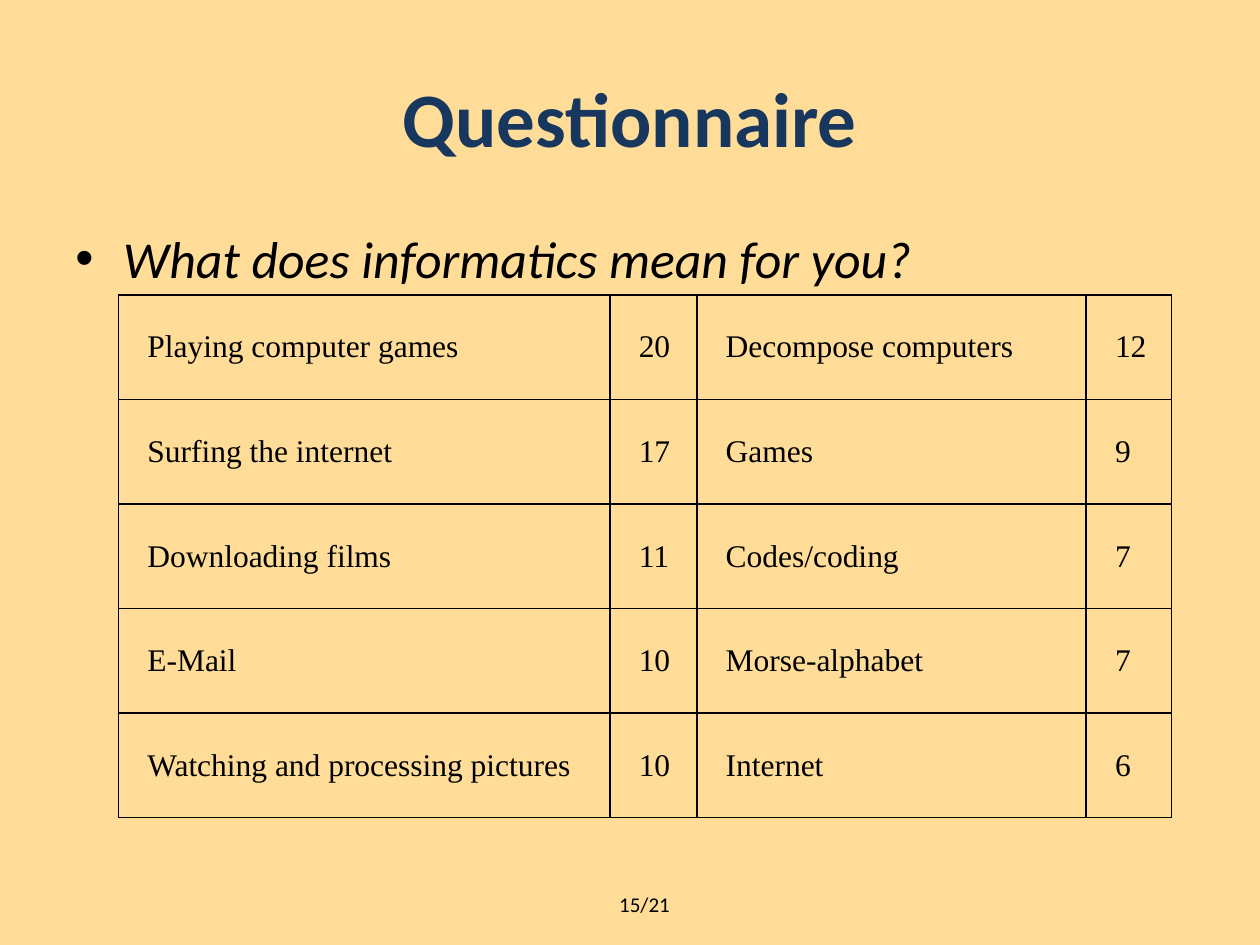
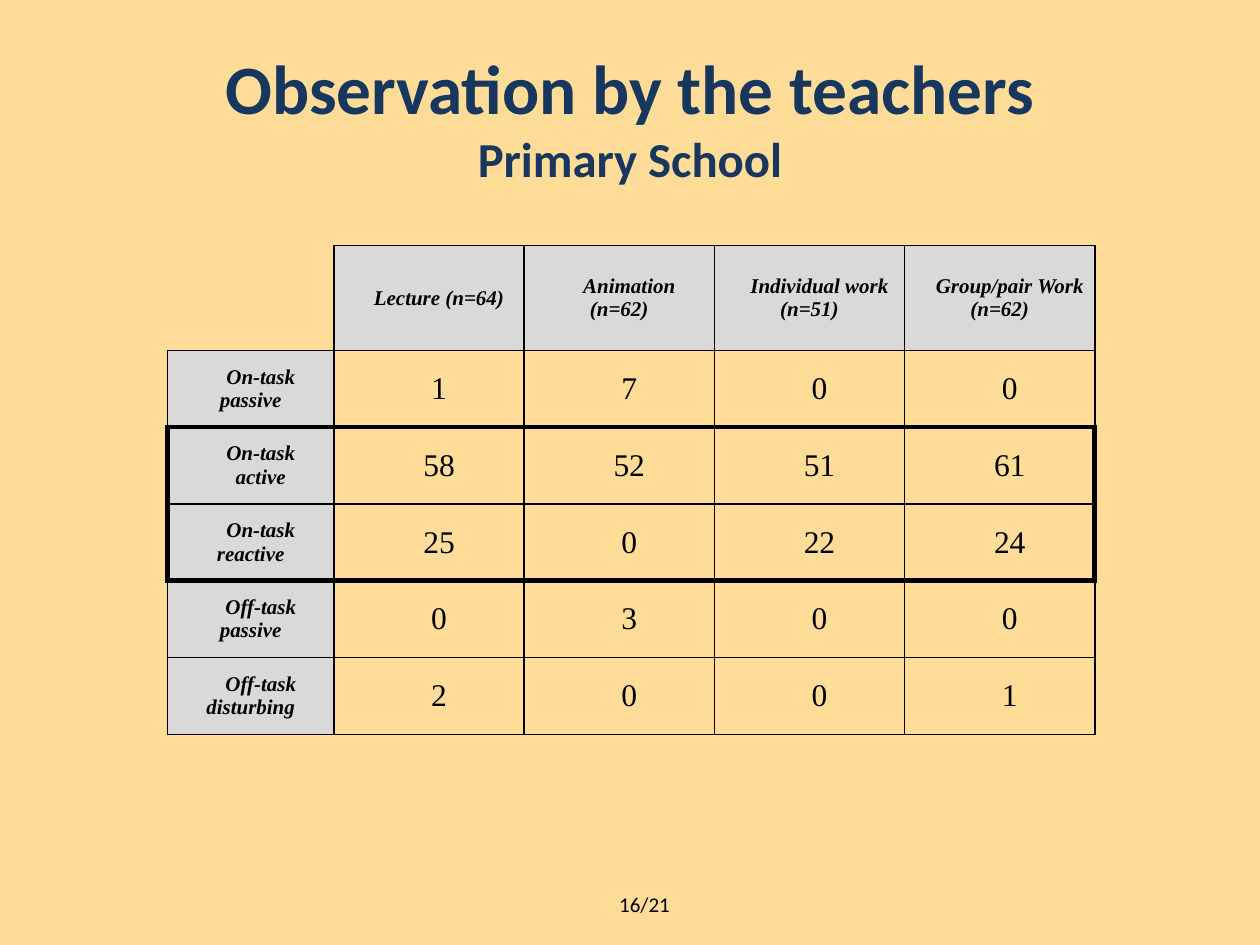
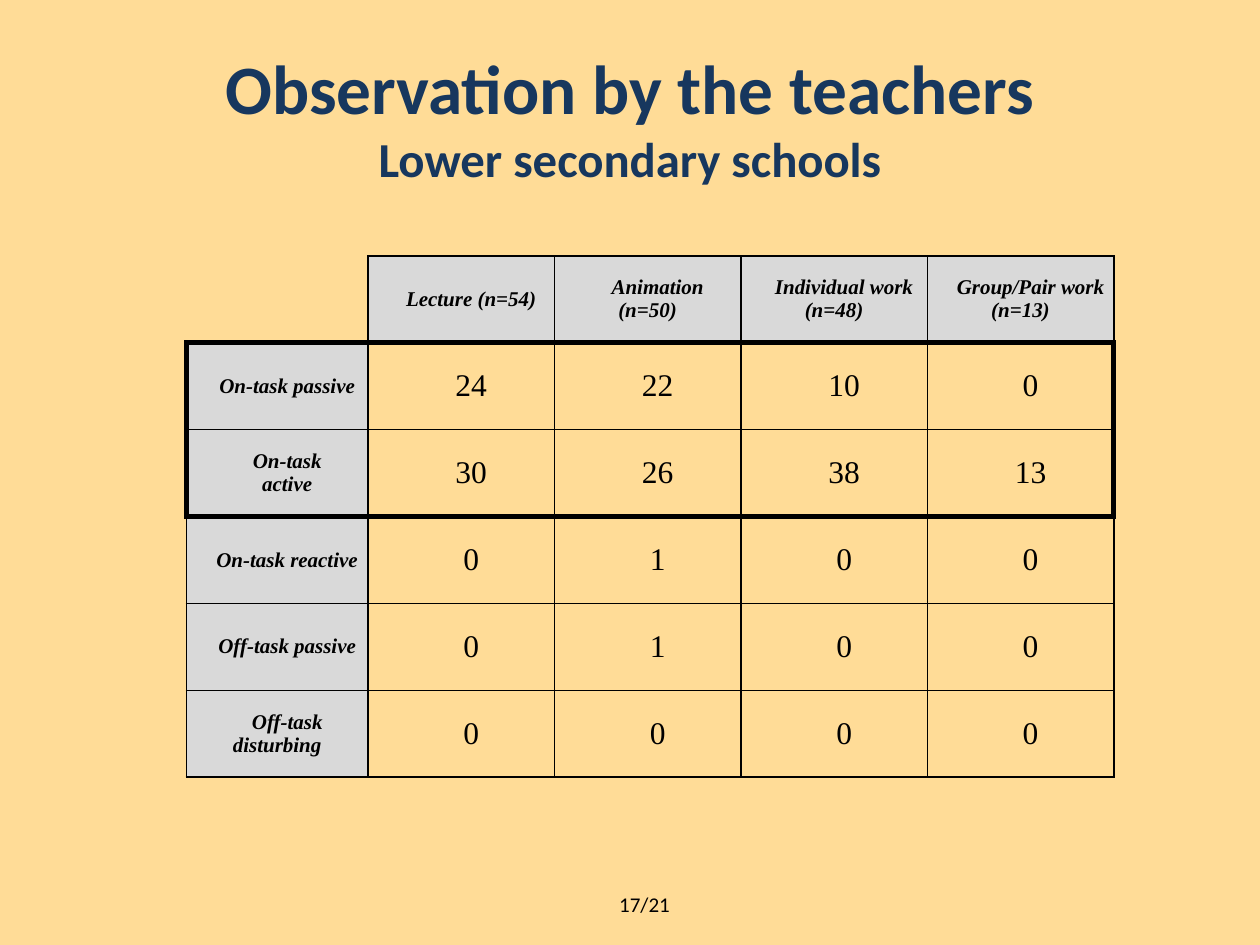
"""Build three slides of survey and classroom observation results."""
from dataclasses import dataclass
from typing import Optional

import pptx
import pptx.dml.color
import pptx.enum.text
import pptx.oxml
import pptx.oxml.ns
import pptx.util
from pptx.util import Inches

SAND, NAVY, GREY, BLACK = "FFDC97", "17375E", "D9D9D9", "000000"
SANS, SERIF = "Calibri", "Times New Roman"
LAST_PAGE = 21
ALIGN = pptx.enum.text.PP_ALIGN
ANCHOR = pptx.enum.text.MSO_ANCHOR


@dataclass(frozen=True)
class Grid:
    left: float
    top: float
    widths: list[float]
    heights: list[float]
    rows: list[list[str]]
    framed_rows: Optional[tuple[int, int]] = None


@dataclass(frozen=True)
class Page:
    number: int
    title: str
    grid: Grid
    subtitle: str = ""
    question: str = ""


PAGES = [
    Page(15, "Questionnaire", Grid(
        0.94, 2.34, [3.9, 0.69, 3.09, 0.68], [0.83] * 5, [
            ["Playing computer games", "20", "Decompose computers", "12"],
            ["Surfing the internet", "17", "Games", "9"],
            ["Downloading films", "11", "Codes/coding", "7"],
            ["E-Mail", "10", "Morse-alphabet", "7"],
            ["Watching and processing pictures", "10", "Internet", "6"],
        ]), question="What does informatics mean for you?"),
    Page(16, "Observation by the teachers", Grid(
        1.33, 1.95, [1.32] + [1.51] * 4, [0.83] + [0.61] * 5, [
            ["", "Lecture (n=64)", "Animation (n=62)",
             "Individual work (n=51)", "Group/pair Work (n=62)"],
            ["On-task passive", "1", "7", "0", "0"],
            ["On-task\nactive", "58", "52", "51", "61"],
            ["On-task reactive", "25", "0", "22", "24"],
            ["Off-task passive", "0", "3", "0", "0"],
            ["Off-task disturbing", "2", "0", "0", "1"],
        ], framed_rows=(2, 3)), subtitle="Primary School"),
    Page(17, "Observation by the teachers", Grid(
        1.48, 2.03, [1.44] + [1.48] * 4, [0.69] * 6, [
            ["", "Lecture (n=54)", "Animation (n=50)",
             "Individual work (n=48)", "Group/Pair work (n=13)"],
            ["On-task passive", "24", "22", "10", "0"],
            ["On-task\nactive", "30", "26", "38", "13"],
            ["On-task reactive", "0", "1", "0", "0"],
            ["Off-task passive", "0", "1", "0", "0"],
            ["Off-task disturbing", "0", "0", "0", "0"],
        ], framed_rows=(1, 2)), subtitle="Lower secondary schools"),
]


def rgb(value: str) -> pptx.dml.color.RGBColor:
    """Turn a hex string into a colour."""
    return pptx.dml.color.RGBColor.from_string(value)


def set_font(font, size: float, name: str = SANS, color: str = BLACK,
             bold: bool = False, italic: bool = False) -> None:
    """Format a font completely."""
    font.size, font.name = pptx.util.Pt(size), name
    font.bold, font.italic = bold, italic
    font.color.rgb = rgb(color)


def add_title(slide, page: Page) -> None:
    """Place the title with its optional smaller second line."""
    title = slide.shapes.title
    title.left, title.top = Inches(0.5), Inches(0.3)
    title.width, title.height = Inches(9), Inches(1.25)
    frame = title.text_frame
    frame.auto_size = pptx.enum.text.MSO_AUTO_SIZE.NONE
    frame.vertical_anchor = ANCHOR.MIDDLE
    heading = frame.paragraphs[0]
    heading.alignment = ALIGN.CENTER
    set_font(heading.font, 39.6 if page.subtitle else 44, color=NAVY, bold=True)
    heading.add_run().text = page.title
    if page.subtitle:
        heading.add_line_break()
        second_line = heading.add_run()
        second_line.text = page.subtitle
        second_line.font.size = pptx.util.Pt(27.9)


def add_line_of_text(slide, text: str, left: float, top: float, width: float, height: float):
    """Add a wrapping text box and return its paragraph."""
    box = slide.shapes.add_textbox(Inches(left), Inches(top), Inches(width), Inches(height))
    box.text_frame.word_wrap = True
    box.text_frame.text = text
    return box.text_frame.paragraphs[0]


def add_question(slide, text: str) -> None:
    """Add the bulleted question above the table."""
    question = add_line_of_text(slide, text, 0.5, 1.75, 9, 0.52)
    properties = question._p.get_or_add_pPr()
    properties.set("marL", str(Inches(0.38)))
    properties.set("indent", str(Inches(-0.38)))
    namespace = pptx.oxml.ns.nsdecls("a")
    properties.append(pptx.oxml.parse_xml(f'<a:buFont {namespace} typeface="Arial"/>'))
    properties.append(pptx.oxml.parse_xml(f'<a:buChar {namespace} char="•"/>'))
    set_font(question.font, 29.6, italic=True)


def add_page_number(slide, number: int) -> None:
    """Add the page count at the foot of the slide."""
    footer = add_line_of_text(slide, f"{number}/{LAST_PAGE}", 4.14, 7.03, 1.95, 0.3)
    footer.alignment = ALIGN.CENTER
    set_font(footer.font, 12)


def border_widths(grid: Grid, row: int, column: int) -> dict[str, int]:
    """Give the border widths of a cell in points, heavy around the framed rows."""
    widths = dict.fromkeys("LRTB", 1)
    if grid.framed_rows:
        first, last = grid.framed_rows
        if first <= row <= last and column == 0:
            widths["L"] = 3
        if first <= row <= last and column == len(grid.widths) - 1:
            widths["R"] = 3
        if row in (first, last + 1):
            widths["T"] = 3
        if row in (first - 1, last):
            widths["B"] = 3
    if not grid.rows[row][column]:
        widths["L"] = widths["T"] = 0
    return widths


def draw_borders(cell, widths: dict[str, int]) -> None:
    """Write the four border lines of a cell."""
    properties = cell._tc.get_or_add_tcPr()
    solid = f'<a:solidFill><a:srgbClr val="{BLACK}"/></a:solidFill>'
    for position, (side, width) in enumerate(widths.items()):
        properties.insert(position, pptx.oxml.parse_xml(
            f'<a:ln{side} {pptx.oxml.ns.nsdecls("a")} w="{pptx.util.Pt(width)}">'
            f'{solid if width else "<a:noFill/>"}</a:ln{side}>'))


def add_grid(slide, grid: Grid) -> None:
    """Draw a table; one with framed rows also has shaded headings."""
    table = slide.shapes.add_table(
        len(grid.heights), len(grid.widths), Inches(grid.left), Inches(grid.top),
        Inches(sum(grid.widths)), Inches(sum(grid.heights))).table
    table.first_row = table.horz_banding = False
    for column, width in zip(table.columns, grid.widths):
        column.width = Inches(width)
    for row, height in zip(table.rows, grid.heights):
        row.height = Inches(height)
    for row, texts in enumerate(grid.rows):
        for column, text in enumerate(texts):
            fill_cell(table.cell(row, column), text, grid, row, column)


def fill_cell(cell, text: str, grid: Grid, row: int, column: int) -> None:
    """Write and format one table cell."""
    observed = grid.framed_rows is not None
    heading = observed and 0 in (row, column)
    cell.margin_left = cell.margin_right = Inches(0.07)
    cell.margin_top = cell.margin_bottom = 0
    cell.vertical_anchor = ANCHOR.MIDDLE
    if heading:
        cell.fill.solid()
        cell.fill.fore_color.rgb = rgb(GREY if text else SAND)
    else:
        cell.fill.background()
    draw_borders(cell, border_widths(grid, row, column))
    if not text:
        return
    cell.text_frame.text = text
    for paragraph in cell.text_frame.paragraphs:
        paragraph._p.get_or_add_pPr().set("indent", str(Inches(0.16)))
        if observed:
            paragraph.alignment = ALIGN.CENTER
        else:
            paragraph.alignment = ALIGN.LEFT if column % 2 else ALIGN.JUSTIFY
        set_font(paragraph.font, 12 if heading else 18, SERIF, bold=heading, italic=heading)


def main() -> None:
    """Build the slides and save them."""
    deck = pptx.Presentation()
    deck.slide_width, deck.slide_height = Inches(10), Inches(7.5)
    backdrop = deck.slide_master.background.fill
    backdrop.solid()
    backdrop.fore_color.rgb = rgb(SAND)
    title_only = deck.slide_layouts.get_by_name("Title Only")
    for page in PAGES:
        slide = deck.slides.add_slide(title_only)
        add_page_number(slide, page.number)
        add_title(slide, page)
        if page.question:
            add_question(slide, page.question)
        add_grid(slide, page.grid)
    deck.save("out.pptx")


if __name__ == "__main__":
    main()
